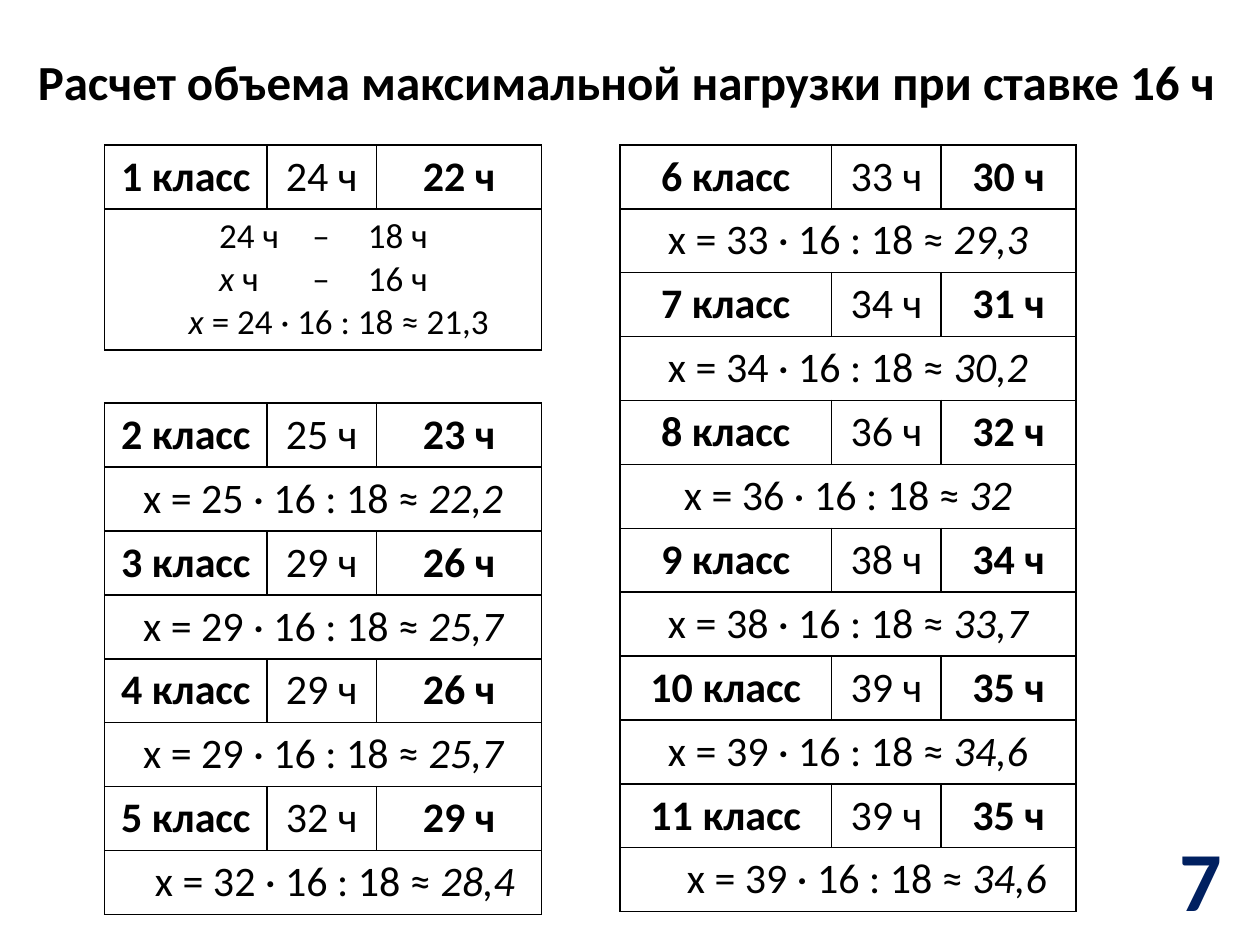
"""Build the slide with the maximum teaching load for each class."""
from dataclasses import dataclass

from lxml.etree import SubElement
from pptx import Presentation
from pptx.dml.color import RGBColor
from pptx.enum.text import MSO_ANCHOR, PP_ALIGN as Align
from pptx.oxml import parse_xml
from pptx.oxml.ns import nsdecls, qn
from pptx.util import Inches, Pt

COLORS = {"text": "000000", "number": "002060"}
FONT = "Calibri"
ROW_HEIGHT = 0.5
INDENT = 0.3


@dataclass
class Load:
    grade: int
    hours: int
    limit: int
    result: str
    indent: float = 0
    align: Align = Align.CENTER


@dataclass
class LoadTable:
    left: float
    top: float
    widths: tuple[float, ...]
    loads: list[Load]


LEFT_WIDTHS = (1.29, 0.87, 1.31)
RIGHT_WIDTHS = (1.68, 0.87, 1.07)
FIRST = LoadTable(0.83, 1.15, LEFT_WIDTHS, [Load(1, 24, 22, "21,3", 0.25)])
OTHERS = [
    LoadTable(0.83, 3.2, LEFT_WIDTHS, [
        Load(2, 25, 23, "22,2"),
        Load(3, 29, 26, "25,7"),
        Load(4, 29, 26, "25,7"),
        Load(5, 32, 29, "28,4", INDENT, Align.LEFT),
    ]),
    LoadTable(4.92, 1.15, RIGHT_WIDTHS, [
        Load(6, 33, 30, "29,3"),
        Load(7, 34, 31, "30,2"),
        Load(8, 36, 32, "32"),
        Load(9, 38, 34, "33,7"),
        Load(10, 39, 35, "34,6"),
        Load(11, 39, 35, "34,6", INDENT),
    ]),
]


def add_run(p, text: str, size: float = 24, bold: bool = False,
            italic: bool = False, color: str = "text") -> None:
    r = p.add_run()
    r.text = text
    r.font.name, r.font.size = FONT, Pt(size)
    r.font.bold, r.font.italic = bold, italic
    r.font.color.rgb = RGBColor.from_string(COLORS[color])


def set_indent(p, indent: float) -> None:
    if indent:
        p._p.get_or_add_pPr().set("marL", str(Inches(indent)))


def add_tabs(p, *stops: float) -> None:
    tabs = SubElement(p._p.get_or_add_pPr(), qn("a:tabLst"))
    for stop in stops:
        SubElement(tabs, qn("a:tab"), pos=str(Inches(stop)), algn="l")


def style_cell(cell) -> None:
    cell.fill.background()
    tc_pr = cell._tc.get_or_add_tcPr()
    for i, side in enumerate("LRTB"):
        tc_pr.insert(i, parse_xml(
            f'<a:ln{side} {nsdecls("a")} w="{Pt(1)}"><a:solidFill>'
            f'<a:srgbClr val="{COLORS["text"]}"/></a:solidFill></a:ln{side}>'))


def add_load_table(s, spec: LoadTable):
    count = 2 * len(spec.loads)
    table = s.shapes.add_table(
        count, len(spec.widths), Inches(spec.left), Inches(spec.top),
        Inches(sum(spec.widths)), Inches(count * ROW_HEIGHT)).table
    table.first_row = table.horz_banding = False
    for column, width in zip(table.columns, spec.widths):
        column.width = Inches(width)
    for cell in table.iter_cells():
        style_cell(cell)
    for i, load in enumerate(spec.loads):
        labels = (f"{load.grade} класс", f"{load.hours} ч", f"{load.limit} ч")
        for j, label in enumerate(labels):
            p = table.cell(2 * i, j).text_frame.paragraphs[0]
            p.alignment = Align.CENTER
            add_run(p, label, bold=j != 1)
        table.cell(2 * i + 1, 0).merge(table.cell(2 * i + 1, 2))
    return table


def add_formulas(table, loads: list[Load]) -> None:
    for i, load in enumerate(loads):
        p = table.cell(2 * i + 1, 0).text_frame.paragraphs[0]
        p.alignment = load.align
        set_indent(p, load.indent)
        add_run(p, f"х = {load.hours} · 16 : 18 ≈ ")
        add_run(p, load.result, italic=True)


def add_proportion(table, load: Load) -> None:
    table.rows[1].height = Inches(1.1)
    tf = table.cell(1, 0).text_frame
    rows = (((f"\t{load.hours} ч\t–\t18 ч", False),),
            (("\tх", True), (" ч\t–\t16 ч", False)))
    for i, runs in enumerate(rows):
        p = tf.add_paragraph() if i else tf.paragraphs[0]
        p.alignment = Align.LEFT
        add_tabs(p, 0.81, 1.55, 1.99)
        for text, italic in runs:
            add_run(p, text, 20, italic=italic)
    p = tf.add_paragraph()
    p.alignment = load.align
    set_indent(p, load.indent)
    add_run(p, "х ", 20, italic=True)
    add_run(p, f"= {load.hours} · 16 : 18 ≈ {load.result}", 20)


def main() -> None:
    prs = Presentation()
    prs.slide_width, prs.slide_height = Inches(10), Inches(7.5)
    s = prs.slides.add_slide(prs.slide_layouts[5])

    title = s.shapes.title
    title.left, title.top = Inches(0.2), Inches(0.36)
    title.width, title.height = Inches(9.61), Inches(0.57)
    title.text_frame.vertical_anchor = MSO_ANCHOR.TOP
    p = title.text_frame.paragraphs[0]
    p.alignment = Align.LEFT
    add_run(p, "Расчет объема максимальной нагрузки при ставке 16 ч", 28, bold=True)

    add_proportion(add_load_table(s, FIRST), FIRST.loads[0])
    for spec in OTHERS:
        add_formulas(add_load_table(s, spec), spec.loads)

    number = s.shapes.add_textbox(Inches(9.26), Inches(6.52), Inches(0.54), Inches(0.91))
    number.text_frame.word_wrap = False
    p = number.text_frame.paragraphs[0]
    p.alignment = Align.CENTER
    add_run(p, "7", 48, bold=True, color="number")

    prs.save("out.pptx")


if __name__ == "__main__":
    main()
